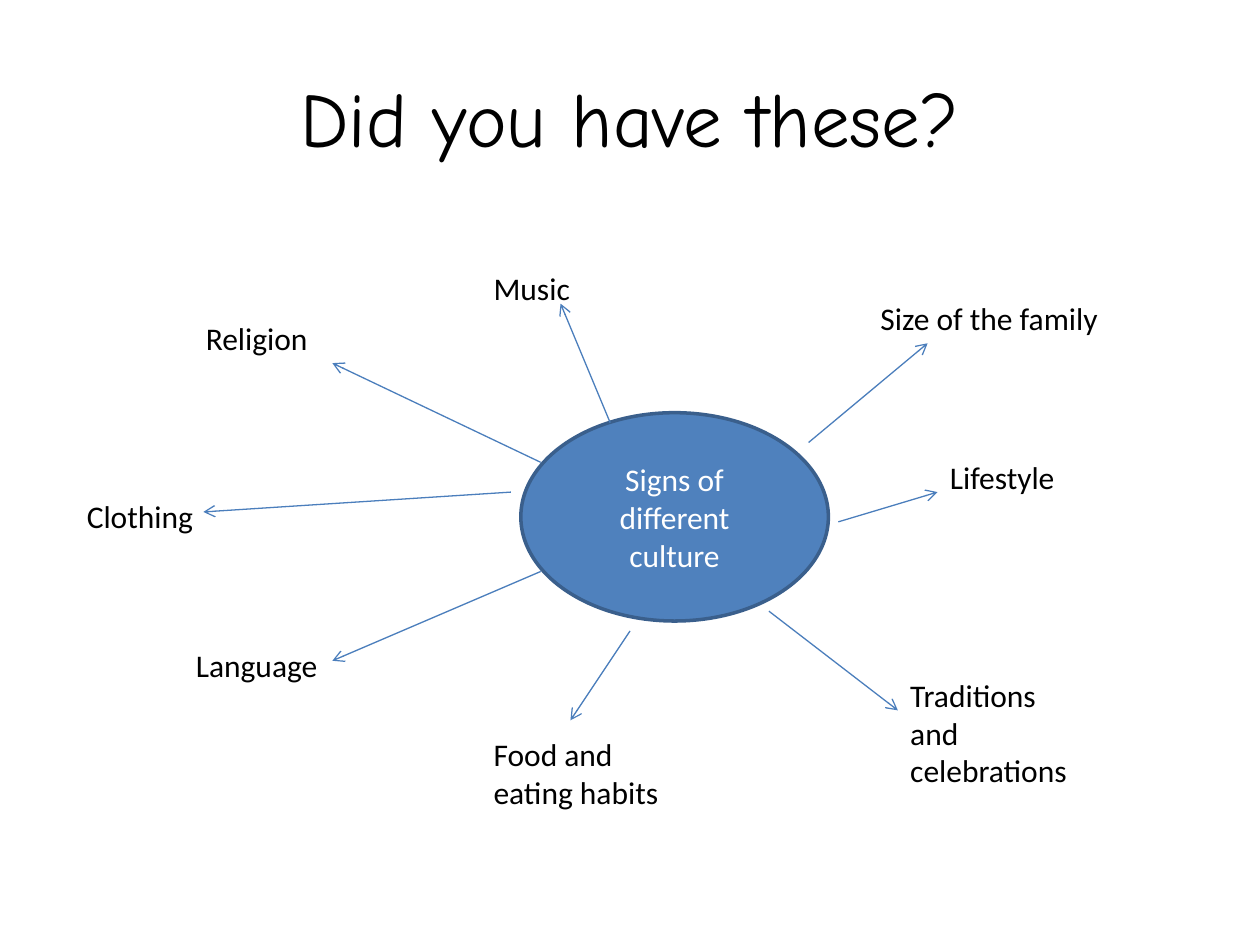
import pptx
import pptx.dml.color
import pptx.enum.shapes
import pptx.enum.text
import pptx.oxml
import pptx.oxml.ns
import pptx.util
from dataclasses import dataclass

Cm, Pt = pptx.util.Cm, pptx.util.Pt
RGB = pptx.dml.color.RGBColor.from_string
Align = pptx.enum.text.PP_ALIGN
Anchor = pptx.enum.text.MSO_ANCHOR
Fit = pptx.enum.text.MSO_AUTO_SIZE
Shape = pptx.enum.shapes.MSO_SHAPE
Link = pptx.enum.shapes.MSO_CONNECTOR


@dataclass
class Theme:
    ink: str = "000000"
    light: str = "FFFFFF"
    fill: str = "4F81BD"
    edge: str = "3A5F8C"
    arrow: str = "4B7EBC"
    head: str = "Comic Neue"
    body: str = "Calibri"
    big: int = 44
    small: int = 18


def apply(target, values):
    for name, value in values.items():
        setattr(target, name, value)


def node(tag, extra=""):
    return pptx.oxml.parse_xml(f'<a:{tag} {pptx.oxml.ns.nsdecls("a")} {extra}/>')


class Board:
    """Holds the style and the current slide."""

    def __init__(self, slide, theme):
        self.slide, self.theme = slide, theme

    def words(self, shape, text, font, size, color, align, frame):
        apply(shape.text_frame, {"word_wrap": True, **frame})
        para = shape.text_frame.paragraphs[0]
        para.alignment = align
        run = para.add_run()
        run.text = text
        apply(run.font, {"name": font, "size": Pt(size)})
        run.font.color.rgb = RGB(color)

    def title(self, text, left, top, width, height):
        t, shape = self.theme, self.slide.shapes.title
        apply(shape, {"left": Cm(left), "top": Cm(top),
                      "width": Cm(width), "height": Cm(height)})
        self.words(shape, text, t.head, t.big, t.ink, Align.CENTER,
                   {"vertical_anchor": Anchor.MIDDLE})

    def hub(self, text, *box):
        t = self.theme
        shape = self.slide.shapes.add_shape(Shape.OVAL, *map(Cm, box))
        shape.shadow.inherit = False
        shape.fill.solid()
        shape.fill.fore_color.rgb = RGB(t.fill)
        shape.line.color.rgb = RGB(t.edge)
        shape.line.width = Pt(2)
        self.words(shape, text, t.body, t.small, t.light, Align.CENTER,
                   {"vertical_anchor": Anchor.MIDDLE})

    def label(self, text, left, top, width, rows=1):
        t = self.theme
        height = 0.25 + 0.77 * rows
        box = self.slide.shapes.add_textbox(*map(Cm, (left, top, width, height)))
        self.words(box, text, t.body, t.small, t.ink, Align.LEFT,
                   {"auto_size": Fit.SHAPE_TO_FIT_TEXT})

    def arrow(self, *ends):
        link = self.slide.shapes.add_connector(Link.STRAIGHT, *map(Cm, ends))
        link.line.color.rgb = RGB(self.theme.arrow)
        link.line.width = Pt(0.75)
        # Open arrowhead at the far end, and no shadow
        props = link._element.spPr
        props.get_or_add_ln().append(node("tailEnd", 'type="arrow"'))
        props.append(node("effectLst"))


# Label text, left, top, width, rows
LABELS = [
    ("Traditions and celebrations", 18.1, 13.5, 4, 3),
    ("Lifestyle", 18.9, 9.1, 5),
    ("Size of the family", 17.5, 5.9, 5),
    ("Music", 9.7, 5.3, 6.8),
    ("Religion", 3.9, 6.3, 4.4),
    ("Clothing", 1.5, 9.9, 4.8),
    ("Language", 3.7, 12.9, 5.2),
    ("Food and eating habits", 9.7, 14.7, 4.6, 2),
]

# Start x, y and end x, y, clockwise from the upper right
ARROWS = [
    (16.3, 8.92, 18.7, 6.92),
    (16.9, 10.52, 18.9, 9.92),
    (15.5, 12.32, 18.1, 14.32),
    (12.7, 12.72, 11.5, 14.52),
    (10.9, 11.52, 6.7, 13.32),
    (10.3, 9.92, 4.1, 10.32),
    (10.9, 9.32, 6.7, 7.32),
    (12.3, 8.52, 11.3, 6.12),
]


def main():
    deck = pptx.Presentation()
    apply(deck, {"slide_width": Cm(25.4), "slide_height": Cm(19.05)})
    board = Board(deck.slides.add_slide(deck.slide_layouts[5]), Theme())

    # Title and centre
    board.title("Did you have these?", 1.27, 0.76, 22.86, 3.18)
    board.hub("Signs of different culture", 10.5, 8.32, 6.2, 4.2)

    # Signs around the centre
    for item in LABELS:
        board.label(*item)
    for ends in ARROWS:
        board.arrow(*ends)

    deck.save("out.pptx")


if __name__ == "__main__":
    main()
